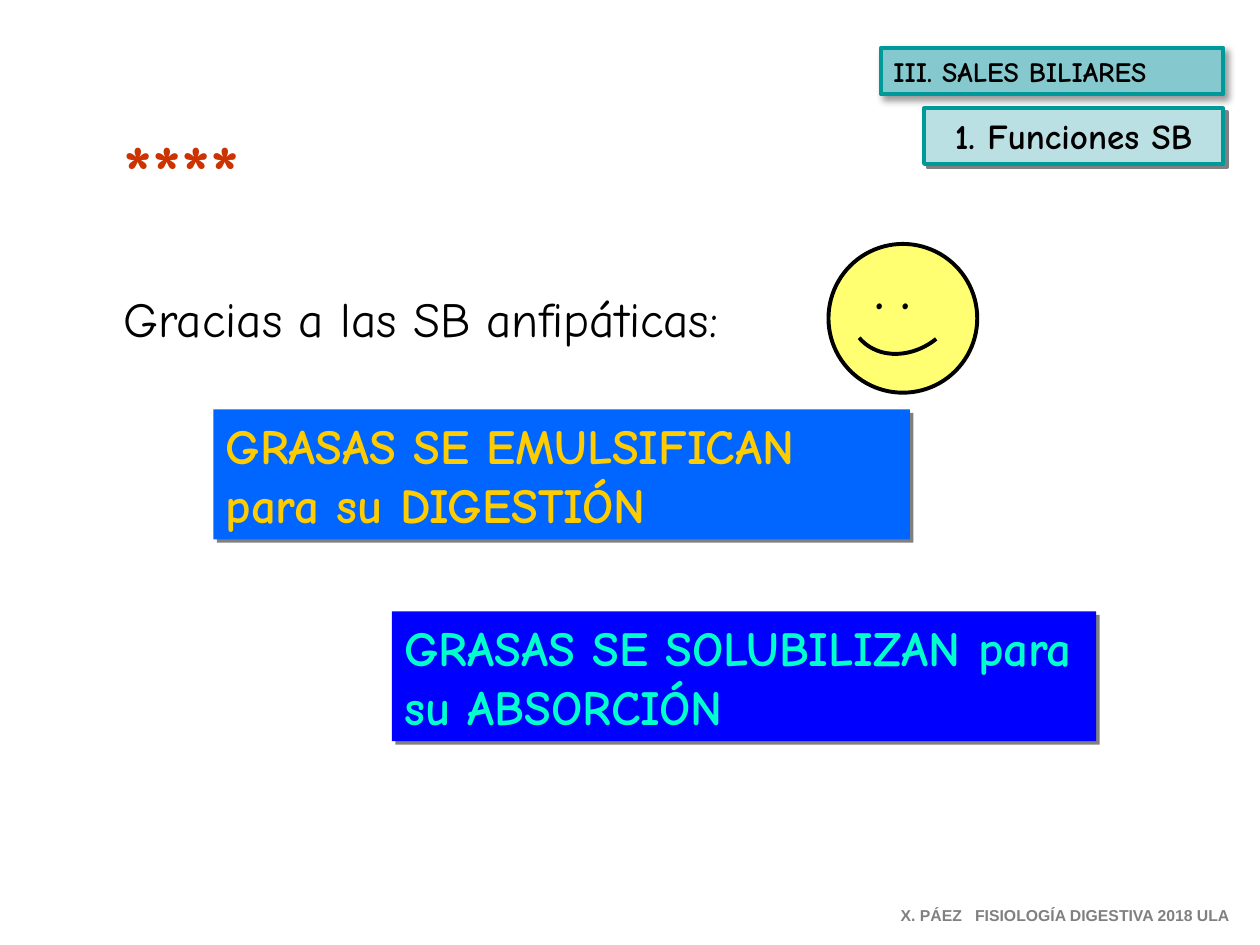
from lxml import etree
from pptx import Presentation
from pptx.dml.color import RGBColor
from pptx.enum.shapes import MSO_SHAPE
from pptx.enum.text import MSO_ANCHOR, PP_ALIGN
from pptx.oxml.ns import qn
from pptx.util import Pt

RECTANGLE, OVAL = MSO_SHAPE.RECTANGLE, MSO_SHAPE.OVAL
TOP, LEFT, CENTER = MSO_ANCHOR.TOP, PP_ALIGN.LEFT, PP_ALIGN.CENTER

THEME = {
    "font": "Comic Neue", "footer_font": "Arial",
    "black": "000000", "gray": "808080", "teal": "009999",
    "teal_mid": "85C8CD", "teal_light": "BBE0E3",
    "blue": "0066FF", "deep_blue": "0000FF", "gold": "FFCC00",
    "aqua": "00FFCC", "red": "CC3300", "yellow": "FFFF71",
    "stars": 44, "body": 28, "topic": 20, "section": 16, "footer": 9,
    "line": 2.25,
}

# Shadows: colour, opacity in percent, blur, distance
HARD = ("gray", 100, 0, 2.8)
SOFT = ("black", 40, 4, 3)

# Plain text: place, text, size, colour, bold, alignment, font
LABELS = [
    ((63.4, 161.3, 388, 41), "Gracias a las SB anfipáticas:", "body", "black", False, LEFT, "font"),
    ((507.6, 514.1, 205.2, 18), "X. PÁEZ   FISIOLOGÍA DIGESTIVA 2018 ULA",
     "footer", "gray", True, LEFT, "footer_font"),
]
STARS = ((63.4, 67, 116.6, 60.5), "****", "stars", "red", True, LEFT, "font")
EYES = ((484.6, 145.4, 51.1, 41), ". .", "body", "black", True, CENTER, "font")

# Boxes: place, lines, size, text colour, alignment, fill, line, shadow
BOXES = [
    ((121.9, 234, 398, 74.2), ["GRASAS SE EMULSIFICAN", "para su DIGESTIÓN"],
     "body", "gold", LEFT, "blue", None, HARD),
    ((223.9, 349.4, 402.5, 74.2), ["GRASAS SE SOLUBILIZAN para su ABSORCIÓN"],
     "body", "aqua", LEFT, "deep_blue", None, HARD),
    ((503.4, 27.4, 195.6, 26.6), ["III. SALES BILIARES"],
     "section", "black", LEFT, "teal_mid", "teal", SOFT),
    ((528, 62, 171, 31.7), ["1. Funciones SB"],
     "topic", "black", CENTER, "teal_light", "teal", HARD),
]
FACE = (473.4, 139.4, 85, 85)
SMILE = [(491, 193), (501.1, 205.2), (520.6, 205.2), (535, 193.7)]  # Bezier points
SMILE_STEPS = 32


def color(name):
    return RGBColor.from_string(THEME[name])


def add_shadow(owner, shadow):
    """Put an outer shadow on shape properties or run properties."""
    name, opacity, blur, distance = shadow
    effects = owner.find(qn("a:effectLst"))
    if effects is None:
        effects = etree.SubElement(owner, qn("a:effectLst"))
    outer = etree.SubElement(effects, qn("a:outerShdw"), blurRad=str(Pt(blur)),
                             dist=str(Pt(distance)), dir="2700000",
                             algn="ctr", rotWithShape="0")
    tint = etree.SubElement(outer, qn("a:srgbClr"), val=THEME[name])
    etree.SubElement(tint, qn("a:alpha"), val=str(opacity * 1000))


def write(frame, lines, size, ink, bold, align, font="font"):
    frame.word_wrap = True
    frame.vertical_anchor = TOP
    for index, line in enumerate(lines):
        para = frame.paragraphs[0] if index == 0 else frame.add_paragraph()
        para.text = line
        para.alignment = align
        para.font.name = THEME[font]
        para.font.size = Pt(THEME[size])
        para.font.bold = bold
        para.font.color.rgb = color(ink)


def add_label(page, place, text, *style):
    box = page.shapes.add_textbox(*map(Pt, place))
    write(box.text_frame, [text], *style)
    return box


def add_filled(page, kind, place, fill, line):
    shape = page.shapes.add_shape(kind, *map(Pt, place))
    shape.shadow.inherit = False
    shape.fill.solid()
    shape.fill.fore_color.rgb = color(fill)
    if line:
        shape.line.color.rgb = color(line)
        shape.line.width = Pt(THEME["line"])
    else:
        shape.line.fill.background()
    return shape


def curve_point(t):
    weights = ((1 - t) ** 3, 3 * t * (1 - t) ** 2, 3 * t * t * (1 - t), t ** 3)
    return tuple(Pt(sum(w * p[axis] for w, p in zip(weights, SMILE))) for axis in (0, 1))


def add_face(page):
    add_filled(page, OVAL, FACE, "yellow", "black")
    add_label(page, *EYES)
    points = [curve_point(step / SMILE_STEPS) for step in range(SMILE_STEPS + 1)]
    builder = page.shapes.build_freeform(*points[0])
    builder.add_line_segments(points[1:], close=False)
    smile = builder.convert_to_shape()
    smile.shadow.inherit = False
    smile.fill.background()
    smile.line.color.rgb = color("black")
    smile.line.width = Pt(THEME["line"])


def main():
    deck = Presentation()
    deck.slide_width, deck.slide_height = Pt(720), Pt(540)
    page = deck.slides.add_slide(deck.slide_layouts[6])

    # Statement and footer
    for label in LABELS:
        add_label(page, *label)

    # Smiling face
    add_face(page)

    # Shadowed boxes
    for place, lines, size, ink, align, fill, line, shadow in BOXES:
        box = add_filled(page, RECTANGLE, place, fill, line)
        add_shadow(box.element.spPr, shadow)
        write(box.text_frame, lines, size, ink, True, align)

    # Stars with shadowed letters
    stars = add_label(page, *STARS)
    span = stars.text_frame.paragraphs[0].runs[0]
    add_shadow(span.font._element, ("black", 100, 0, 2.8))

    deck.save("out.pptx")


if __name__ == "__main__":
    main()
